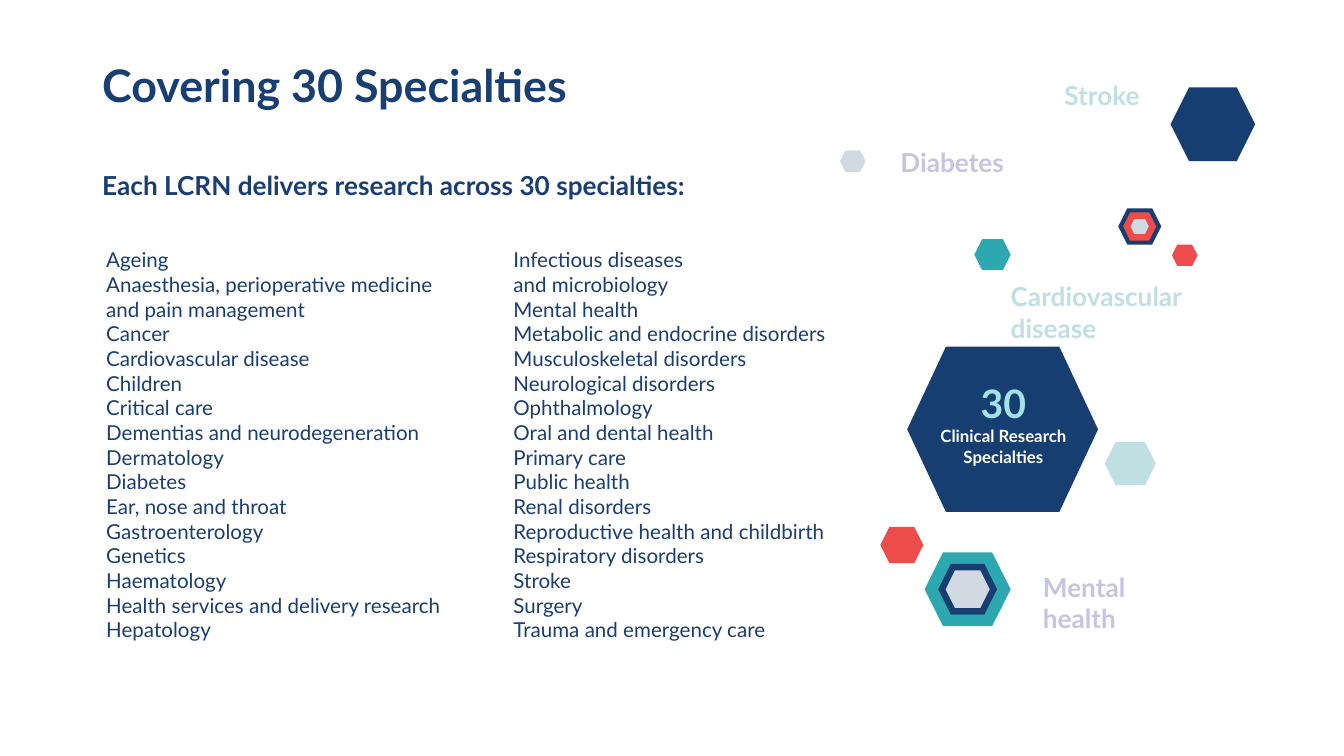
import copy

import pptx
import pptx.dml.color
import pptx.enum.shapes
import pptx.enum.text
import pptx.oxml.ns
import pptx.util

Inches = pptx.util.Inches
RGBColor = pptx.dml.color.RGBColor
ALIGN = pptx.enum.text.PP_ALIGN
ANCHOR = pptx.enum.text.MSO_ANCHOR
qn = pptx.oxml.ns.qn

NAVY = RGBColor(0x19, 0x3E, 0x72)
DEEP = RGBColor(0x17, 0x3E, 0x71)
TEAL = RGBColor(0x2D, 0xA8, 0xB0)
RED = RGBColor(0xEE, 0x4B, 0x4B)
GREY = RGBColor(0xD1, 0xD9, 0xE2)
MINT = RGBColor(0xC0, 0xDF, 0xE3)
LILAC = RGBColor(0xC5, 0xC4, 0xE2)
AQUA = RGBColor(0xA0, 0xE4, 0xE8)
WHITE = RGBColor(0xFF, 0xFF, 0xFF)

LEFT = [
    "Ageing",
    "Anaesthesia, perioperative medicine\vand pain management",
    "Cancer",
    "Cardiovascular disease",
    "Children",
    "Critical care",
    "Dementias and neurodegeneration",
    "Dermatology",
    "Diabetes",
    "Ear, nose and throat",
    "Gastroenterology",
    "Genetics",
    "Haematology",
    "Health services and delivery research",
    "Hepatology",
]
RIGHT = [
    "Infectious diseases\vand microbiology",
    "Mental health",
    "Metabolic and endocrine disorders",
    "Musculoskeletal disorders",
    "Neurological disorders",
    "Ophthalmology",
    "Oral and dental health",
    "Primary care",
    "Public health",
    "Renal disorders",
    "Reproductive health and childbirth",
    "Respiratory disorders",
    "Stroke",
    "Surgery",
    "Trauma and emergency care",
]


def write(frame, text, size, color, bold=False, align=ALIGN.LEFT, space=1.0, more=False):
    para = frame.add_paragraph() if more else frame.paragraphs[0]
    para.text = text
    para.alignment = align
    para.line_spacing = space
    para.space_before = pptx.util.Pt(0)
    for run in para.runs:
        run.font.name = "Lato"
        run.font.size = pptx.util.Pt(size)
        run.font.bold = bold
        run.font.color.rgb = color
    for mark in para._p.findall(qn("a:br")):
        mark.insert(0, copy.deepcopy(para.runs[0]._r.rPr))
    return para


def fit(shape, box, pad=0.04, anchor=ANCHOR.TOP):
    shape.left, shape.top, shape.width, shape.height = map(Inches, box)
    frame = shape.text_frame
    frame.word_wrap = True
    frame.auto_size = pptx.enum.text.MSO_AUTO_SIZE.NONE
    frame.vertical_anchor = anchor
    frame.margin_left = frame.margin_right = Inches(0.07)
    frame.margin_top = frame.margin_bottom = Inches(pad)
    return frame


def add_box(slide, box, **style):
    return fit(slide.shapes.add_textbox(0, 0, 0, 0), box, **style)


def add_hex(slide, box, fill, edge=None, adj=0.25):
    shape = slide.shapes.add_shape(
        pptx.enum.shapes.MSO_SHAPE.HEXAGON, *map(Inches, box))
    shape.adjustments[0] = adj
    shape.shadow.inherit = False
    shape.fill.solid()
    shape.fill.fore_color.rgb = fill
    if edge is None:
        shape.line.fill.background()
    else:
        shape.line.color.rgb = edge
        shape.line.width = pptx.util.Pt(3.5)
        line = shape.line._get_or_add_ln()
        line.append(line.makeelement(qn("a:miter"), {"lim": "800000"}))


def add_ring(slide, box, outer, inner, edge):
    x, y, w, h = box
    add_hex(slide, box, outer)
    add_hex(slide, (x + 0.2 * w, y + 0.2 * h, 0.6 * w, 0.6 * h), inner, edge)


def add_head(slide, box):
    x, y, w, h = box
    title = fit(slide.shapes.title, (x, y, w, 0.71), anchor=ANCHOR.MIDDLE)
    write(title, "Covering 30 Specialties", 24, NAVY, bold=True, space=0.9)
    body = fit(slide.placeholders[1], (x, y + 0.95, 4.54, 0.42))
    para = write(body, "Each LCRN delivers research across 30 specialties:",
                 14, NAVY, bold=True, space=0.9)
    props = para._p.get_or_add_pPr()
    props.set("marL", "0")
    props.set("indent", "0")
    props.append(props.makeelement(qn("a:buNone"), {}))


def add_lists(slide, box):
    x, y, w, h = box
    for col, items in enumerate((LEFT, RIGHT)):
        frame = add_box(slide, (x + col * 3.03, y, 3.52, h), pad=0.07)
        for row, item in enumerate(items):
            write(frame, item, 11, NAVY, more=row > 0)


def add_badge(slide, box):
    x, y, w, h = box
    add_hex(slide, box, DEEP, adj=0.234)
    frame = add_box(slide, (x + 0.02, y + 0.16, w - 0.03, 0.81),
                    pad=0.07, anchor=ANCHOR.MIDDLE)
    write(frame, "30", 21, AQUA, bold=True, align=ALIGN.CENTER)
    write(frame, "Clinical Research Specialties", 9, WHITE, bold=True,
          align=ALIGN.CENTER, more=True)


def add_cloud(slide, box):
    x, y, w, h = box
    add_badge(slide, (x + 0.5, y + 2.03, 1.42, 1.23))
    for dx, dy, wide, high, fill in (
        (1.0, 1.23, 0.27, 0.23, TEAL),
        (2.47, 1.27, 0.19, 0.16, RED),
        (0.3, 3.37, 0.32, 0.27, RED),
        (2.46, 0.1, 0.63, 0.55, DEEP),
        (0, 0.57, 0.19, 0.16, GREY),
        (1.97, 2.74, 0.38, 0.32, MINT),
    ):
        add_hex(slide, (x + dx, y + dy, wide, high), fill)
    add_ring(slide, (x + 2.07, y + 1.0, 0.32, 0.27), DEEP, GREY, RED)
    add_ring(slide, (x + 0.63, y + 3.56, 0.64, 0.55), TEAL, GREY, DEEP)
    for dx, dy, wide, text, color in (
        (1.2, 1.5, 1.92, "Cardiovascular disease", MINT),
        (0.38, 0.5, 0.98, "Diabetes", LILAC),
        (1.44, 3.66, 1.26, "Mental health", LILAC),
        (1.6, 0, 0.75, "Stroke", MINT),
    ):
        frame = add_box(slide, (x + dx, y + dy, wide, 0.3))
        write(frame, text, 14, color, bold=True)


def main():
    deck = pptx.Presentation()
    deck.slide_width = Inches(10)
    deck.slide_height = deck.slide_width * 9 // 16
    slide = deck.slides.add_slide(deck.slide_layouts[1])
    add_head(slide, (0.69, 0.3, 8.62, 1.38))
    add_lists(slide, (0.72, 1.77, 6.55, 2.81))
    add_cloud(slide, (6.25, 0.55, 3.12, 4.11))
    deck.save("out.pptx")


if __name__ == "__main__":
    main()
